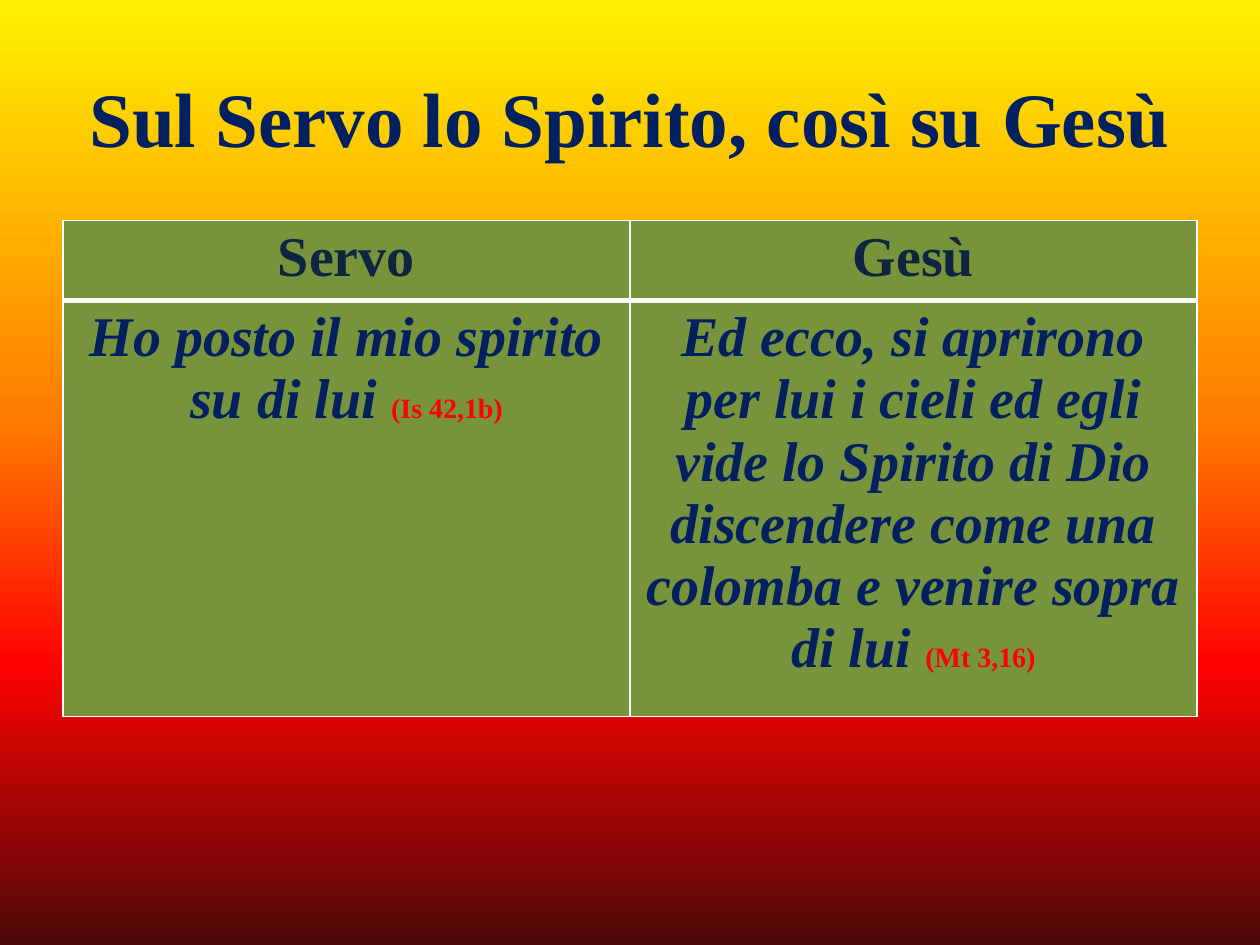
from lxml import etree
from pptx import Presentation
from pptx.dml.color import RGBColor
from pptx.enum.text import MSO_ANCHOR, PP_ALIGN
from pptx.oxml.ns import qn
from pptx.util import Inches, Pt

CENTER = PP_ALIGN.CENTER
MIDDLE = MSO_ANCHOR.MIDDLE
FONT = "Times New Roman"
COLORS = {
    "navy": "002060",
    "heading": "0F243E",
    "reference": "FF0000",
    "cell": "77933C",
    "border": "FFFFFF",
}
SUNSET = [(0, "FFF200"), (45, "FF7A00"), (70, "FF0300"), (100, "4D0808")]
VERSES = [
    ("Ho posto il mio spirito su di lui ", "(Is 42,1b)"),
    (
        "Ed ecco, si aprirono per lui i cieli ed egli vide lo Spirito di Dio "
        "discendere come una colomba e venire sopra di lui ",
        "(Mt 3,16)",
    ),
]


def add_span(para, text, size=32, color="navy", italic=False):
    para.alignment = CENTER
    span = para.add_run()
    span.text = text
    span.font.name = FONT
    span.font.size = Pt(size)
    span.font.bold = True
    span.font.italic = italic
    span.font.color.rgb = RGBColor.from_string(COLORS[color])


class SlideBuilder:
    def __init__(self, page):
        self.page = page

    def background(self, stops):
        fill = self.page.background.fill
        fill.gradient()
        fill.gradient_angle = 270
        stop_list = next(self.page.element.iter(qn("a:gsLst")))
        for stop in list(stop_list):
            stop_list.remove(stop)
        for percent, color in stops:
            stop = etree.SubElement(stop_list, qn("a:gs"), pos=str(percent * 1000))
            etree.SubElement(stop, qn("a:srgbClr"), val=color)

    def title(self, text, left, top, width, height):
        box = self.page.shapes.add_textbox(left, top, width, height)
        frame = box.text_frame
        frame.word_wrap = True
        frame.vertical_anchor = MIDDLE
        add_span(frame.paragraphs[0], text, size=44)

    def table(self, left, top, widths, heights):
        frame = self.page.shapes.add_table(
            len(heights), len(widths), left, top, sum(widths), sum(heights)
        )
        table = frame.table
        for column, width in zip(table.columns, widths):
            column.width = width
        for row, height in zip(table.rows, heights):
            row.height = height
        return table

    def cell(self, cell, spans, top=1, bottom=1):
        properties = cell._tc.get_or_add_tcPr()
        for side, points in (("L", 1), ("R", 1), ("T", top), ("B", bottom)):
            line = etree.SubElement(properties, qn(f"a:ln{side}"), w=str(Pt(points)))
            fill = etree.SubElement(line, qn("a:solidFill"))
            etree.SubElement(fill, qn("a:srgbClr"), val=COLORS["border"])
        cell.fill.solid()
        cell.fill.fore_color.rgb = RGBColor.from_string(COLORS["cell"])
        for text, style in spans:
            add_span(cell.text_frame.paragraphs[0], text, **style)


def main():
    deck = Presentation()
    deck.slide_width, deck.slide_height = Inches(10), Inches(7.5)
    builder = SlideBuilder(deck.slides.add_slide(deck.slide_layouts[6]))
    builder.background(SUNSET)
    builder.title(
        "Sul Servo lo Spirito, così su Gesù",
        Inches(0.5), Inches(0.3), Inches(9), Inches(1.25),
    )
    table = builder.table(
        Inches(0.5), Inches(1.75), [Inches(4.5)] * 2, [Inches(0.59), Inches(3.07)]
    )
    for column, (heading, verse) in enumerate(zip(("Servo", "Gesù"), VERSES)):
        quote, reference = verse
        builder.cell(
            table.cell(0, column), [(heading, {"color": "heading"})], bottom=3
        )
        builder.cell(
            table.cell(1, column),
            [
                (quote, {"italic": True}),
                (reference, {"size": 16, "color": "reference"}),
            ],
            top=3,
        )
    deck.save("out.pptx")


if __name__ == "__main__":
    main()
